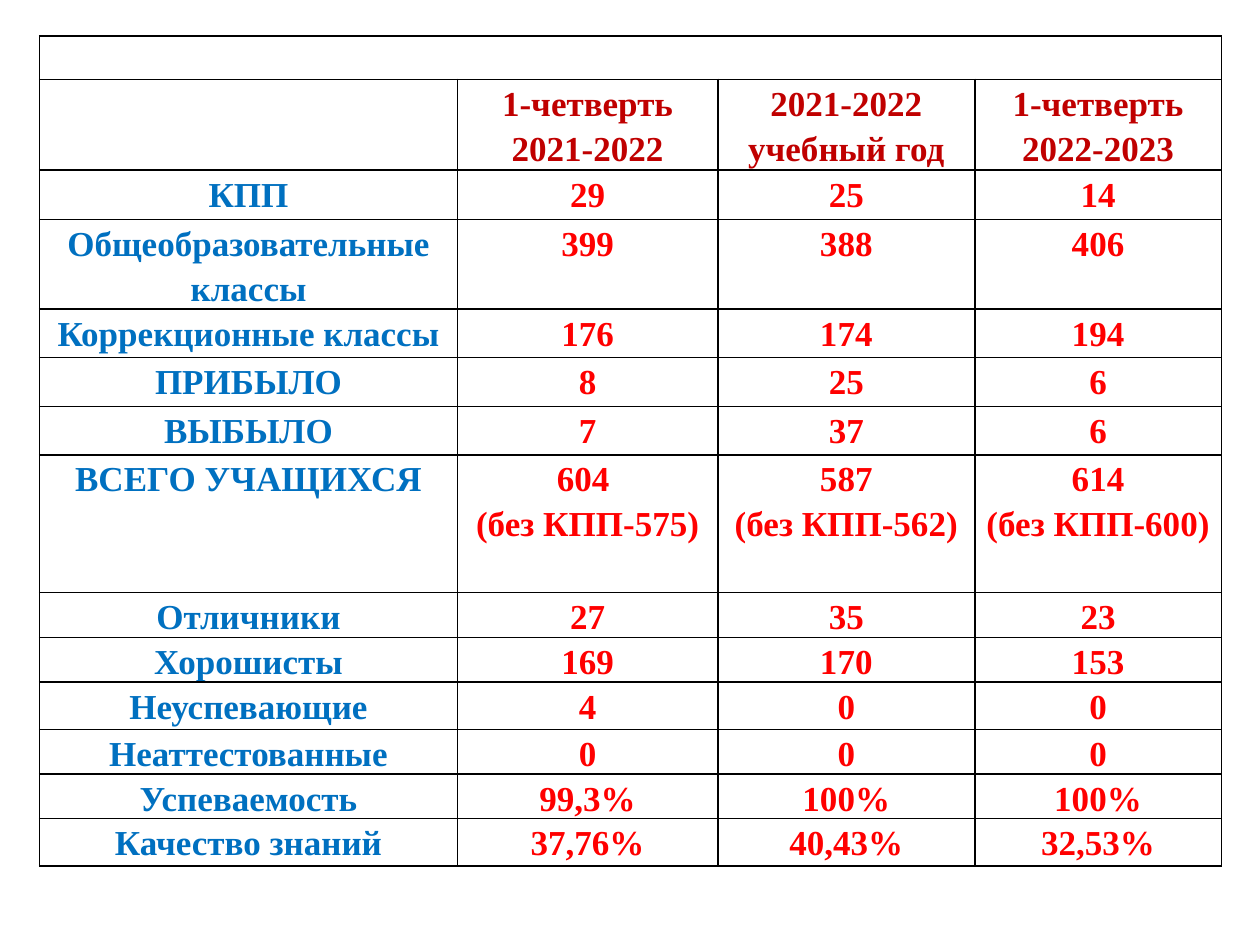
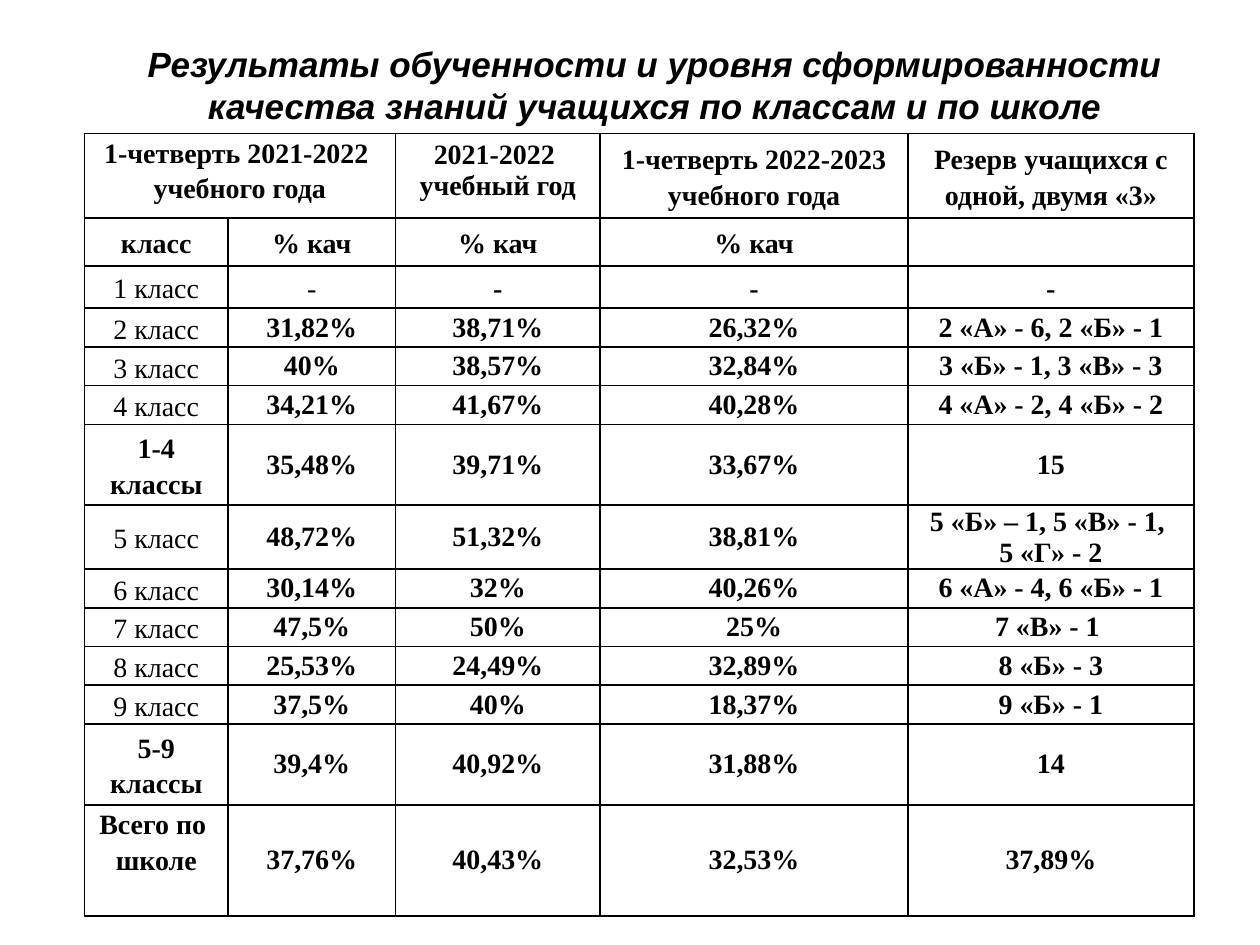
"""Build two slides with tables of school results."""
from dataclasses import dataclass

from lxml.etree import SubElement
from pptx import Presentation
from pptx.dml.color import RGBColor
from pptx.enum.text import MSO_ANCHOR, MSO_AUTO_SIZE, PP_ALIGN
from pptx.oxml.ns import qn
from pptx.util import Cm, Pt


@dataclass(frozen=True)
class Theme:
    ink: str = "000000"
    head: str = "C00000"
    label: str = "0070C0"
    value: str = "FF0000"
    serif: str = "Times New Roman"
    sans: str = "Arial"
    large: int = 20
    small: int = 16
    line: float = 1
    loose: float = 1.15
    side: float = 0.18
    pad: float = 0.13


TOTALS = [
    ["", "", "", ""],
    ["", "1-четверть 2021-2022", "2021-2022 учебный год", "1-четверть 2022-2023"],
    ["КПП", "29", "25", "14"],
    ["Общеобразовательные классы", "399", "388", "406"],
    ["Коррекционные классы", "176", "174", "194"],
    ["ПРИБЫЛО", "8", "25", "6"],
    ["ВЫБЫЛО", "7", "37", "6"],
    ["ВСЕГО УЧАЩИХСЯ", "604 \n(без КПП-575)", "587\n(без КПП-562)", "614\n(без КПП-600)"],
    ["Отличники", "27", "35", "23"],
    ["Хорошисты", "169", "170", "153"],
    ["Неуспевающие", "4", "0", "0"],
    ["Неаттестованные", "0", "0", "0"],
    ["Успеваемость", "99,3%", "100%", "100%"],
    ["Качество знаний", "37,76%", "40,43%", "32,53%"],
]

GRADES = [
    ["1-четверть 2021-2022 \nучебного года", "", "2021-2022 \nучебный год",
     "1-четверть 2022-2023 учебного года", "Резерв учащихся с одной, двумя «3»"],
    ["класс", "% кач", "% кач", "% кач", ""],
    ["1 класс", "-", "-", "-", "-"],
    ["2 класс", "31,82%", "38,71%", "26,32%", "2 «А» - 6, 2 «Б» - 1"],
    ["3 класс", "40%", "38,57%", "32,84%", "3 «Б» - 1, 3 «В» - 3"],
    ["4 класс", "34,21%", "41,67%", "40,28%", "4 «А» - 2, 4 «Б» - 2"],
    ["1-4 классы", "35,48%", "39,71%", "33,67%", "15"],
    ["5 класс", "48,72%", "51,32%", "38,81%", "5 «Б» – 1, 5 «В» - 1, \n5 «Г» - 2"],
    ["6 класс", "30,14%", "32%", "40,26%", "6 «А» - 4, 6 «Б» - 1"],
    ["7 класс", "47,5%", "50%", "25%", "7 «В» - 1 "],
    ["8 класс", "25,53%", "24,49%", "32,89%", "8 «Б» - 3"],
    ["9 класс", "37,5%", "40%", "18,37%", "9 «Б» - 1"],
    ["5-9 классы", "39,4%", "40,92%", "31,88%", "14"],
    ["Всего по \nшколе", "37,76%", "40,43%", "32,53%", "37,89%"],
]


def put(item, **form):
    for name, value in form.items():
        setattr(item, name, value)


class Deck:
    def __init__(self, theme):
        self.theme = theme
        self.show = Presentation()
        put(self.show, slide_width=Cm(25.4), slide_height=Cm(19.05))
        self.slide = None

    def add(self, layout):
        self.slide = self.show.slides.add_slide(self.show.slide_layouts[layout])

    def label(self, frame, text, color, space=1.0, **font):
        for i, line in enumerate(text.split("\n")):
            para = frame.paragraphs[0] if i == 0 else frame.add_paragraph()
            put(para, alignment=PP_ALIGN.CENTER, line_spacing=space)
            if line:
                run = para.add_run()
                run.text = line
                put(run.font, **font)
                run.font.color.rgb = RGBColor.from_string(color)

    def title(self, text, left, top, width, height):
        box = self.slide.shapes.title
        put(box, left=Cm(left), top=Cm(top), width=Cm(width), height=Cm(height))
        put(box.text_frame, word_wrap=True, auto_size=MSO_AUTO_SIZE.NONE,
            vertical_anchor=MSO_ANCHOR.TOP)
        self.label(box.text_frame, text, self.theme.ink, name=self.theme.sans,
                   size=Pt(self.theme.large), bold=True, italic=True)

    def border(self, cell):
        cell.fill.background()
        props = cell._tc.get_or_add_tcPr()
        for i, side in enumerate("LRTB"):
            line = SubElement(props, qn(f"a:ln{side}"), w=str(Pt(self.theme.line)))
            fill = SubElement(line, qn("a:solidFill"))
            SubElement(fill, qn("a:srgbClr"), val=self.theme.ink)
            props.insert(i, line)

    def table(self, data, left, top, widths, heights, span, style):
        frame = self.slide.shapes.add_table(
            len(data), len(widths), Cm(left), Cm(top), Cm(sum(widths)), Cm(sum(heights)))
        grid = frame.table
        put(grid, first_row=False, horz_banding=False)
        for col, width in zip(grid.columns, widths):
            col.width = Cm(width)
        for row, height in zip(grid.rows, heights):
            row.height = Cm(height)
        grid.cell(0, 0).merge(grid.cell(0, span - 1))
        for r, row in enumerate(data):
            for c, text in enumerate(row):
                cell = grid.cell(r, c)
                box, form = style(r, c, text)
                put(cell, **{"margin_left": Cm(self.theme.side),
                             "margin_right": Cm(self.theme.side),
                             "margin_top": 0, "margin_bottom": 0, **box})
                self.border(cell)
                self.label(cell.text_frame, text, name=self.theme.serif, **form)

    def total(self, r, c, text):
        look = self.theme
        color = look.head if r == 1 else look.value if c else look.label
        return {}, dict(color=color, space=look.loose, size=Pt(look.large), bold=True)

    def grade(self, r, c, text):
        look = self.theme
        box = {}
        if r == 0 and c > 1:
            box = dict(margin_top=Cm(look.pad), margin_bottom=Cm(look.pad))
        elif r and (r, c) != (len(GRADES) - 1, 0):
            box = dict(vertical_anchor=MSO_ANCHOR.MIDDLE)
        loose = c == 0 or r < 3 and (r, c) != (0, 2)
        plain = text.endswith(" класс") or (r, c) == (2, 1)
        return box, dict(color=look.ink, space=look.loose if loose else 1.0,
                         size=Pt(look.small), bold=not plain)


def main():
    deck = Deck(Theme())
    deck.add(6)
    deck.table(TOTALS, 0.8, 0.73, [8.42, 5.25, 5.18, 4.97],
               [0.87, 1.83, 0.99, 1.81, 0.98, 0.98, 0.98, 2.78,
                0.88, 0.88, 0.95, 0.88, 0.88, 0.95], 4, deck.total)
    deck.add(5)
    deck.title("Результаты обученности и уровня сформированности "
               "качества знаний учащихся по классам и по школе", 1.7, 0.73, 23, 1.96)
    short, tall = 0.78, 1.63
    deck.table(GRADES, 1.7, 2.69, [2.9, 3.37, 4.13, 6.2, 5.77],
               [1.69, 0.97, 0.85, *[short] * 3, tall, 1.29, *[short] * 4, tall, 2.24],
               2, deck.grade)
    deck.show.save("out.pptx")


if __name__ == "__main__":
    main()
